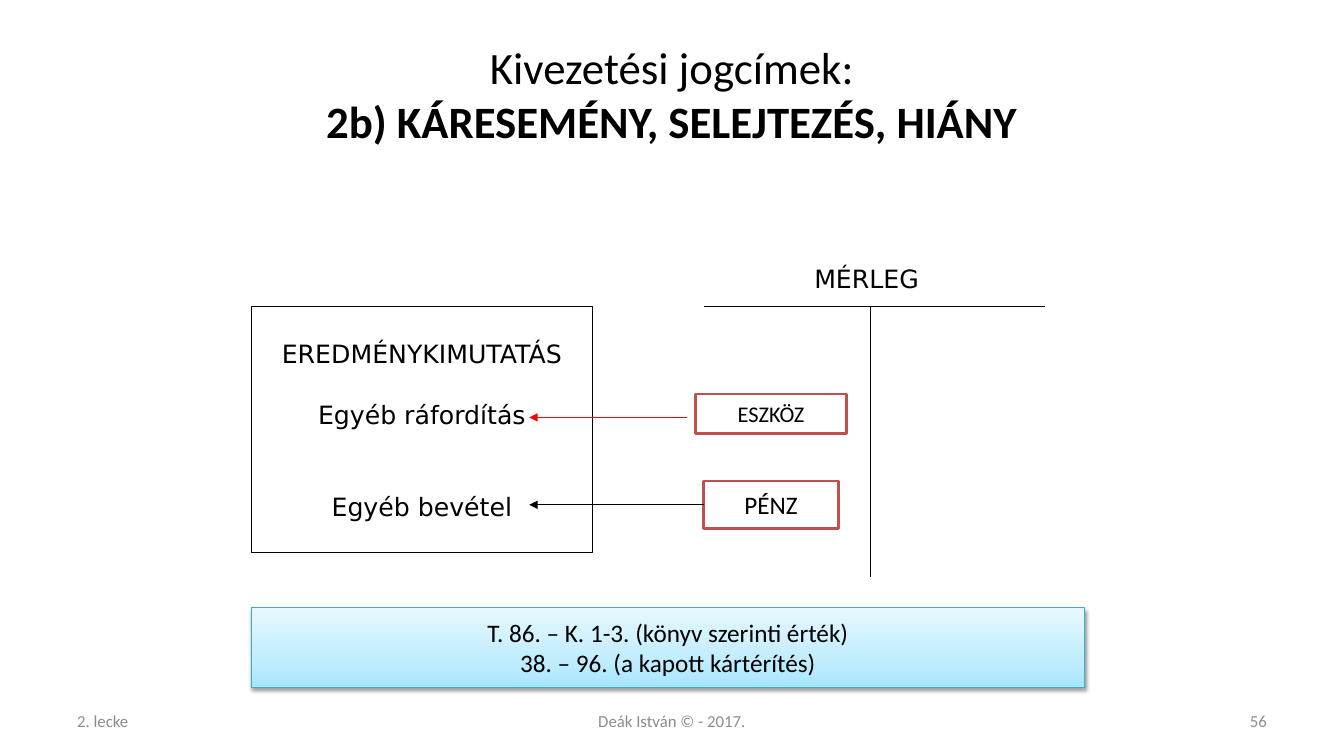
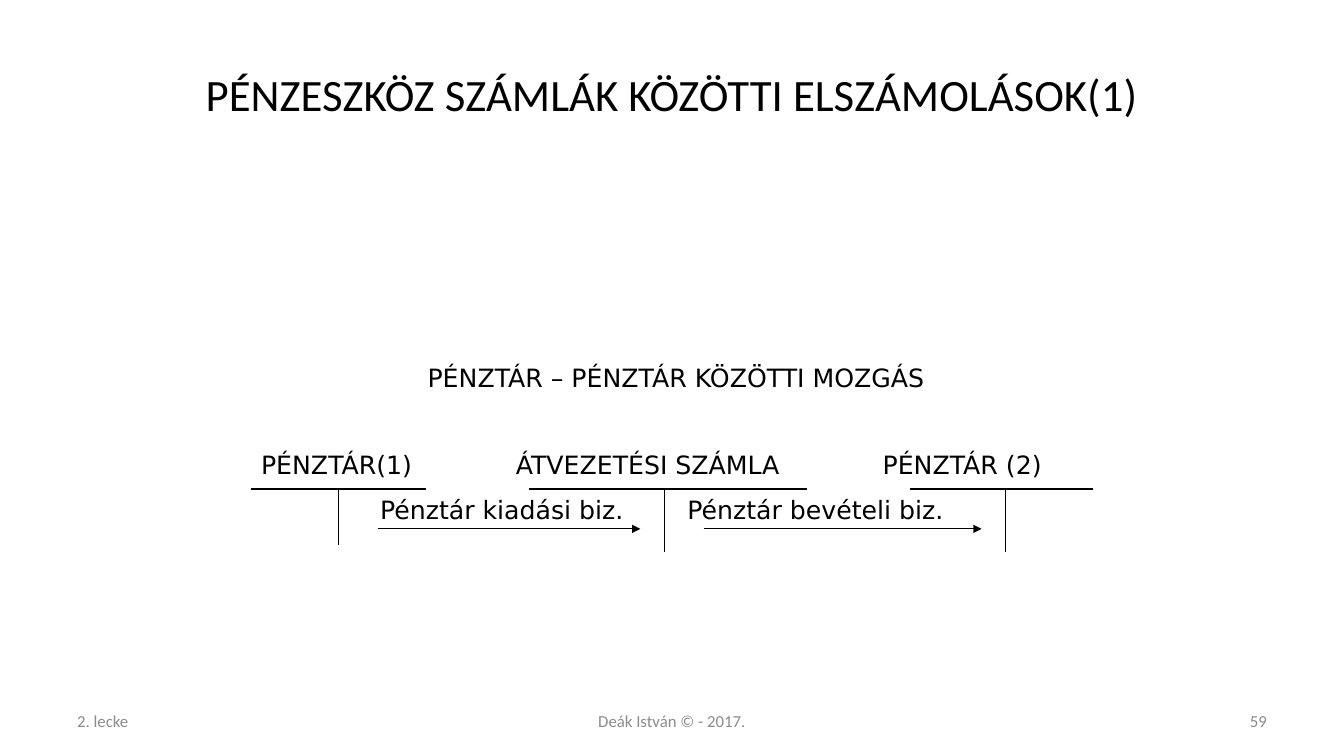
from copy import deepcopy

from lxml.etree import SubElement
from pptx import Presentation
from pptx.dml.color import RGBColor
from pptx.enum.shapes import MSO_CONNECTOR as Connector, MSO_SHAPE as Shape
from pptx.enum.text import MSO_ANCHOR as Anchor, PP_ALIGN as Align
from pptx.oxml.ns import qn
from pptx.util import Pt

BLACK, WHITE, GRAY = "000000", "FFFFFF", "8C8C8C"
RED, BRICK, TEAL = "FF0000", "C0504D", "46AAC5"
BAND_STOPS = ((0, "A7E6FF"), (0.35, "C1EDFF"), (1, "E7F8FF"))
BODY, DIAGRAM = "Calibri", "DejaVu Sans"
FOOTER_TOP, FOOTER_HEIGHT = 500.4, 28.8


def color(value):
    """Turn a hex string into a colour."""
    return RGBColor.from_string(value)


def add_run(paragraph, text, size, font, ink=BLACK, bold=False):
    """Append one formatted run."""
    run = paragraph.add_run()
    run.text = text
    run.font.size, run.font.name, run.font.bold = Pt(size), font, bold
    run.font.color.rgb = color(ink)


def add_tabs(paragraph, stops):
    """Give a paragraph left tab stops."""
    tabs = SubElement(paragraph._p.get_or_add_pPr(), qn("a:tabLst"))
    for stop in stops:
        SubElement(tabs, qn("a:tab"), pos=str(Pt(stop)), algn="l")


def write(shape, lines, size=18, font=BODY, ink=BLACK, align=Align.CENTER,
          gaps=(), wrap=False):
    """Write one paragraph per line, with gaps between the paragraphs."""
    frame = shape.text_frame
    frame.word_wrap = wrap
    frame.vertical_anchor = Anchor.MIDDLE
    for index, line in enumerate(lines):
        paragraph = frame.add_paragraph() if index else frame.paragraphs[0]
        paragraph.alignment = align
        if index and gaps:
            paragraph.space_before = Pt(gaps[index - 1])
        add_run(paragraph, line, size, font, ink)


def add_text(slide, left, top, width, height):
    """Add an empty text box."""
    return slide.shapes.add_textbox(Pt(left), Pt(top), Pt(width), Pt(height))


def add_box(slide, left, top, width, height, fill=None, outline=BLACK, weight=0.75):
    """Add an outlined rectangle without a shadow."""
    shape = slide.shapes.add_shape(Shape.RECTANGLE, Pt(left), Pt(top), Pt(width), Pt(height))
    shape.shadow.inherit = False
    if fill:
        shape.fill.solid()
        shape.fill.fore_color.rgb = color(fill)
    else:
        shape.fill.background()
    shape.line.color.rgb = color(outline)
    shape.line.width = Pt(weight)
    return shape


def add_band(slide, left, top, width, height):
    """Add a rectangle with an upward gradient and a soft shadow."""
    shape = add_box(slide, left, top, width, height, outline=TEAL)
    shape.fill.gradient()
    shape.fill.gradient_angle = 90
    properties = shape.element.spPr
    stop_list = properties.find(qn("a:gradFill")).find(qn("a:gsLst"))
    stop_list.insert(1, deepcopy(stop_list[0]))
    for stop, (position, value) in zip(shape.fill.gradient_stops, BAND_STOPS):
        stop.position = position
        stop.color.rgb = color(value)
    shadow = SubElement(properties.find(qn("a:effectLst")), qn("a:outerShdw"),
                        blurRad=str(Pt(3.1)), dist=str(Pt(1.6)), dir="5400000", rotWithShape="0")
    tone = SubElement(shadow, qn("a:srgbClr"), val=BLACK)
    SubElement(tone, qn("a:alpha"), val="38000")
    return shape


def add_line(slide, start, end, ink=BLACK, arrow=False):
    """Draw a thin line, with an arrowhead at its end if asked."""
    connector = slide.shapes.add_connector(Connector.STRAIGHT, *map(Pt, start + end))
    connector.line.color.rgb = color(ink)
    connector.line.width = Pt(0.75)
    properties = connector.element.spPr
    if arrow:
        SubElement(properties.find(qn("a:ln")), qn("a:tailEnd"), type="triangle")
    SubElement(properties, qn("a:effectLst"))


def add_account(slide, left, right, top, stem, bottom):
    """Draw a T account."""
    add_line(slide, (left, top), (right, top))
    add_line(slide, (stem, top), (stem, bottom))


def add_slide(presentation, title_lines, number):
    """Add a slide with its title and footers; a second title line is bold."""
    slide = presentation.slides.add_slide(presentation.slide_layouts[5])
    title = slide.shapes.title
    title.left, title.top, title.width, title.height = map(Pt, (48, 21.6, 864, 90))
    title.text_frame.vertical_anchor = Anchor.MIDDLE
    paragraph = title.text_frame.paragraphs[0]
    paragraph.alignment = Align.CENTER
    for index, line in enumerate(title_lines):
        if index:
            paragraph.add_line_break()
        add_run(paragraph, line, 32, BODY, bold=index > 0)
    footers = ((48, 224, "2. lecke", Align.LEFT),
               (328, 304, "Deák István © - 2017.", Align.CENTER),
               (688, 224, number, Align.RIGHT))
    for left, width, text, align in footers:
        footer = add_text(slide, left, FOOTER_TOP, width, FOOTER_HEIGHT)
        write(footer, [text], 12, ink=GRAY, align=align, wrap=True)
    return slide


def build_write_off(presentation):
    """Build the slide on damage, scrapping and shortage."""
    slide = add_slide(presentation, ["Kivezetési jogcímek:", "2b) KÁRESEMÉNY, SELEJTEZÉS, HIÁNY"], "56")
    income = add_box(slide, 179.4, 219, 244, 175.6)
    write(income, ["EREDMÉNYKIMUTATÁS", "Egyéb ráfordítás", "Egyéb bevétel"],
          font=DIAGRAM, gaps=(22, 44))
    write(add_text(slide, 548, 185, 142, 28), ["MÉRLEG"], font=DIAGRAM)
    add_account(slide, 502.6, 746.6, 219, 622, 411.8)
    add_line(slide, (491, 298.2), (378, 298.2), RED, arrow=True)
    write(add_box(slide, 496.8, 281.5, 108, 28, WHITE, BRICK, 2), ["ESZKÖZ"], 16)
    write(add_box(slide, 502.6, 343.6, 96.4, 34, WHITE, BRICK, 2), ["PÉNZ"])
    add_line(slide, (502.6, 360.6), (378, 360.6), arrow=True)
    write(add_band(slide, 179.4, 434.3, 595.4, 56.8),
          ["T. 86. – K. 1-3. (könyv szerinti érték)", "38. – 96. (a kapott kártérítés)"])


def build_cash_transfer(presentation):
    """Build the slide on transfers between cash accounts."""
    slide = add_slide(presentation, ["PÉNZESZKÖZ SZÁMLÁK KÖZÖTTI ELSZÁMOLÁSOK(1)"], "59")
    labels = add_text(slide, 179.4, 255.6, 607, 126.7)
    write(labels, ["PÉNZTÁR – PÉNZTÁR KÖZÖTTI MOZGÁS",
                   "PÉNZTÁR(1)\tÁTVEZETÉSI SZÁMLA\tPÉNZTÁR (2)",
                   "\tPénztár kiadási biz.\tPénztár bevételi biz."],
          font=DIAGRAM, gaps=(40.5, 10), wrap=True)
    labels.text_frame.vertical_anchor = Anchor.TOP
    for paragraph, stops in zip(labels.text_frame.paragraphs[1:], ((182, 444), (85, 304.5))):
        paragraph.alignment = Align.LEFT
        add_tabs(paragraph, stops)
    for left, right, stem, bottom in ((179.4, 304.4, 242, 389), (378, 576.6, 474.4, 394.6),
                                      (650, 780.4, 718, 394.6)):
        add_account(slide, left, right, 349.3, stem, bottom)
    for start, end in ((270, 457.4), (502.6, 701.2)):
        add_line(slide, (start, 377.8), (end, 377.8), arrow=True)


def main():
    """Build and save the presentation."""
    presentation = Presentation()
    presentation.slide_width, presentation.slide_height = Pt(960), Pt(540)
    build_write_off(presentation)
    build_cash_transfer(presentation)
    presentation.save("out.pptx")


if __name__ == "__main__":
    main()
